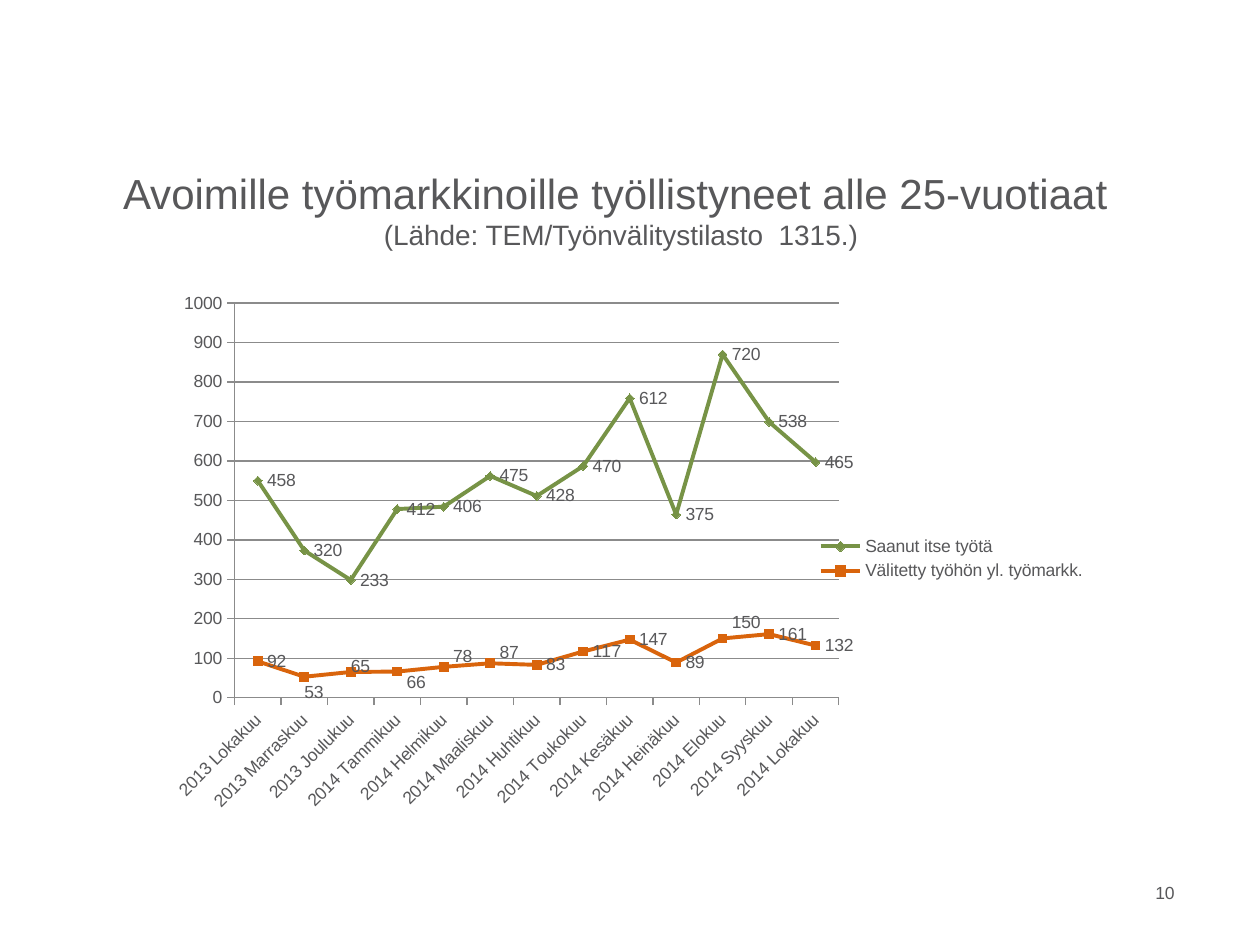
from dataclasses import dataclass

from lxml.etree import SubElement
from pptx import Presentation
from pptx.chart.data import CategoryChartData
from pptx.dml.color import RGBColor
from pptx.enum.chart import (XL_CHART_TYPE, XL_LABEL_POSITION, XL_LEGEND_POSITION,
                             XL_MARKER_STYLE, XL_TICK_MARK)
from pptx.enum.text import MSO_ANCHOR, PP_ALIGN
from pptx.oxml.ns import qn
from pptx.util import Cm, Pt


@dataclass(frozen=True)
class Theme:
    font: str = "Arial"
    text: RGBColor = RGBColor(0x58, 0x58, 0x5A)
    grid: RGBColor = RGBColor(0x8B, 0x8B, 0x8B)
    orange: RGBColor = RGBColor(0xD9, 0x64, 0x0C)
    green: RGBColor = RGBColor(0x77, 0x93, 0x46)
    title: Pt = Pt(24)
    subtitle: Pt = Pt(16)
    small: Pt = Pt(10)
    series_line: Pt = Pt(2.25)
    grid_line: Pt = Pt(0.75)
    marker: int = 5


MONTHS = ["2013 Lokakuu", "2013 Marraskuu", "2013 Joulukuu", "2014 Tammikuu",
          "2014 Helmikuu", "2014 Maaliskuu", "2014 Huhtikuu", "2014 Toukokuu",
          "2014 Kesäkuu", "2014 Heinäkuu", "2014 Elokuu", "2014 Syyskuu",
          "2014 Lokakuu"]
PLACED = [92, 53, 65, 66, 78, 87, 83, 117, 147, 89, 150, 161, 132]
FOUND_WORK = [458, 320, 233, 412, 406, 475, 428, 470, 612, 375, 720, 538, 465]
PLACED_LABEL_SHIFTS = {1: (-0.01, 0.03), 2: (-0.01, -0.01), 3: (0, 0.02),
                       4: (0, -0.02), 5: (0, -0.02), 10: (0, -0.03)}


class SlideBuilder:
    def __init__(self, slide, theme):
        self.slide = slide
        self.theme = theme

    def style_font(self, font, size):
        font.name = self.theme.font
        font.size = size
        font.color.rgb = self.theme.text

    def add_text(self, box, lines, alignment, anchor):
        shape = self.slide.shapes.add_textbox(*map(Cm, box))
        frame = shape.text_frame
        frame.word_wrap = True
        frame.vertical_anchor = anchor
        paragraph = frame.paragraphs[0]
        paragraph.alignment = alignment
        for index, (text, size) in enumerate(lines):
            if index:
                paragraph.add_line_break()
            run = paragraph.add_run()
            run.text = text
            self.style_font(run.font, size)

    def set_layout(self, element, position, values):
        layout = element.makeelement(qn("c:layout"))
        element.insert(position, layout)
        manual = SubElement(layout, qn("c:manualLayout"))
        for name, value in values.items():
            SubElement(manual, qn(f"c:{name}")).set("val", str(value))

    def style_axis(self, axis):
        axis.major_tick_mark = XL_TICK_MARK.OUTSIDE
        axis.minor_tick_mark = XL_TICK_MARK.NONE
        self.style_font(axis.tick_labels.font, self.theme.small)
        self.style_line(axis.format.line, self.theme.grid, self.theme.grid_line)

    def style_line(self, line, color, width):
        line.color.rgb = color
        line.width = width

    def style_series(self, series, color, marker, shifts):
        series.smooth = False
        self.style_line(series.format.line, color, self.theme.series_line)
        series.marker.style = marker
        series.marker.size = self.theme.marker
        series.marker.format.fill.solid()
        series.marker.format.fill.fore_color.rgb = color
        series.marker.format.line.color.rgb = color
        labels = series.data_labels
        labels.show_value = True
        labels.position = XL_LABEL_POSITION.RIGHT
        self.style_font(labels.font, self.theme.small)
        for index, (x, y) in shifts.items():
            label = series.points[index].data_label
            self.style_font(label.font, self.theme.small)
            label.position = XL_LABEL_POSITION.RIGHT
            element = labels._element.xpath(f"c:dLbl[c:idx/@val='{index}']")[0]
            self.set_layout(element, 1, {"x": x, "y": y})

    def add_line_chart(self, box, categories, series_specs):
        data = CategoryChartData()
        data.categories = categories
        for name, values, *_ in series_specs:
            data.add_series(name, values)
        chart = self.slide.shapes.add_chart(
            XL_CHART_TYPE.LINE_MARKERS_STACKED, *map(Cm, box), data).chart
        self.style_font(chart.font, self.theme.small)
        chart.has_title = False
        plot = chart.plots[0]
        plot.vary_by_categories = False
        for series, (_, _, color, marker, shifts) in zip(plot.series, series_specs):
            self.style_series(series, color, marker, shifts)

        self.style_axis(chart.category_axis)
        text_body = chart.category_axis._element.find(qn("c:txPr"))
        text_body.find(qn("a:bodyPr")).set("rot", "-2700000")
        value_axis = chart.value_axis
        self.style_axis(value_axis)
        value_axis.minimum_scale = 0
        value_axis.maximum_scale = 1000
        value_axis.major_unit = 100
        value_axis.has_major_gridlines = True
        self.style_line(value_axis.major_gridlines.format.line,
                        self.theme.grid, self.theme.grid_line)

        chart.has_legend = True
        legend = chart.legend
        legend.position = XL_LEGEND_POSITION.RIGHT
        legend.include_in_layout = False
        self.style_font(legend.font, self.theme.small)
        for old in legend._element.findall(qn("c:layout")):
            legend._element.remove(old)
        self.set_layout(legend._element, 1, {
            "xMode": "edge", "yMode": "edge",
            "x": 0.7, "y": 0.46, "w": 0.29, "h": 0.1})
        plot_area = chart._chartSpace.chart.plotArea
        for old in plot_area.findall(qn("c:layout")):
            plot_area.remove(old)
        self.set_layout(plot_area, 0, {
            "layoutTarget": "inner", "xMode": "edge", "yMode": "edge",
            "x": 0.076, "y": 0.036, "w": 0.648, "h": 0.732})


def main():
    presentation = Presentation()
    presentation.slide_width = Cm(25.4)
    presentation.slide_height = Cm(19.05)
    theme = Theme()
    slide = presentation.slides.add_slide(presentation.slide_layouts[6])
    builder = SlideBuilder(slide, theme)
    builder.add_text(
        (1.09, 3.33, 22.86, 1.78),
        [("Avoimille työmarkkinoille työllistyneet alle 25-vuotiaat ", theme.title),
         ("(Lähde: TEM/Työnvälitystilasto  1315.)", theme.subtitle)],
        PP_ALIGN.CENTER, MSO_ANCHOR.MIDDLE)
    builder.add_text((22.81, 17.65, 1.12, 1.02), [("10", theme.small)],
                     PP_ALIGN.RIGHT, MSO_ANCHOR.TOP)
    builder.add_line_chart(
        (3.3, 5.72, 18.8, 10.87), MONTHS,
        [("Välitetty työhön yl. työmarkk.", PLACED, theme.orange,
          XL_MARKER_STYLE.SQUARE, PLACED_LABEL_SHIFTS),
         ("Saanut itse työtä", FOUND_WORK, theme.green,
          XL_MARKER_STYLE.DIAMOND, {})])
    presentation.save("out.pptx")


if __name__ == "__main__":
    main()
